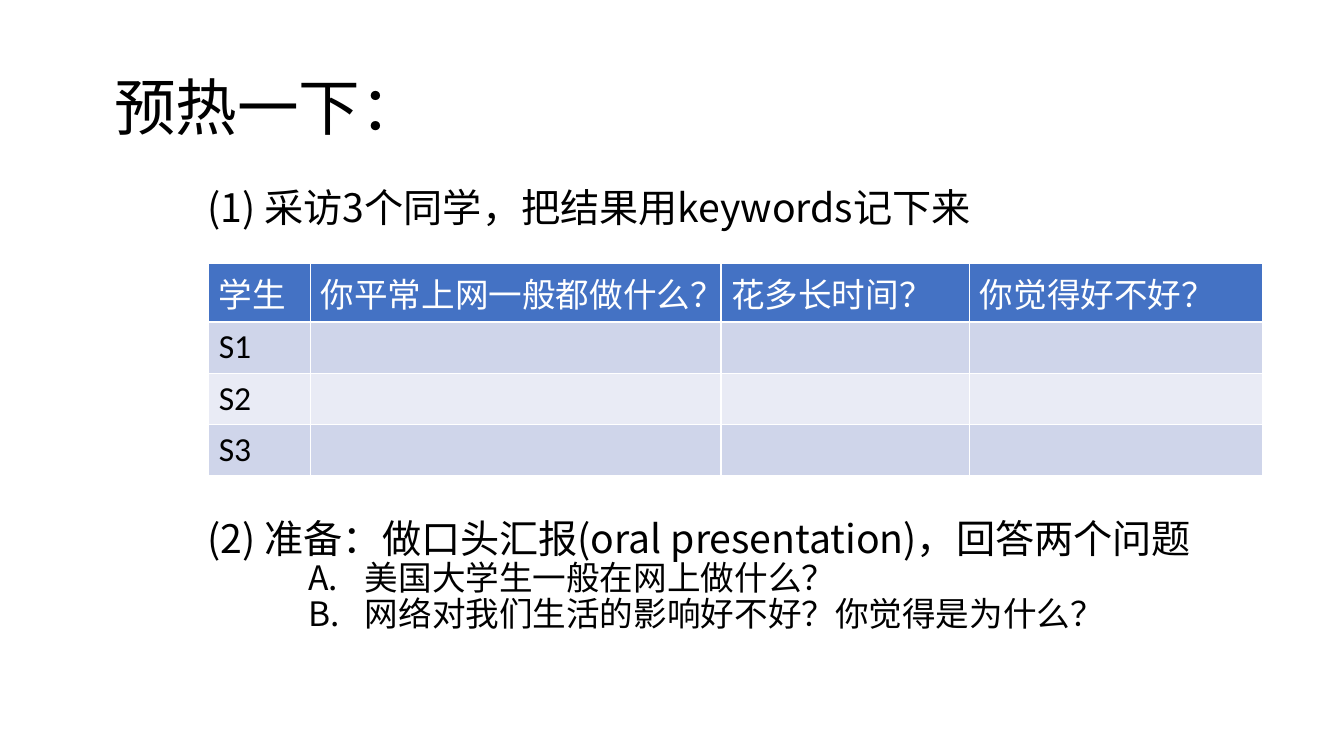
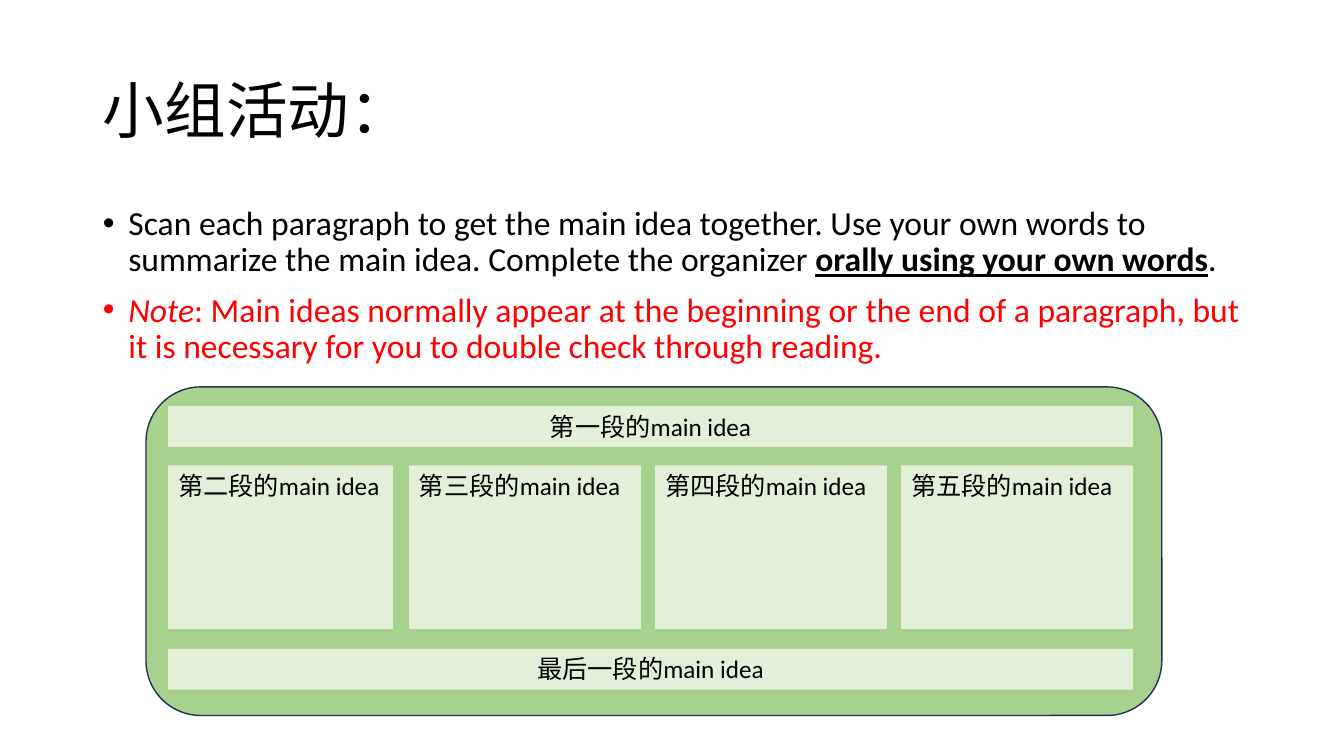
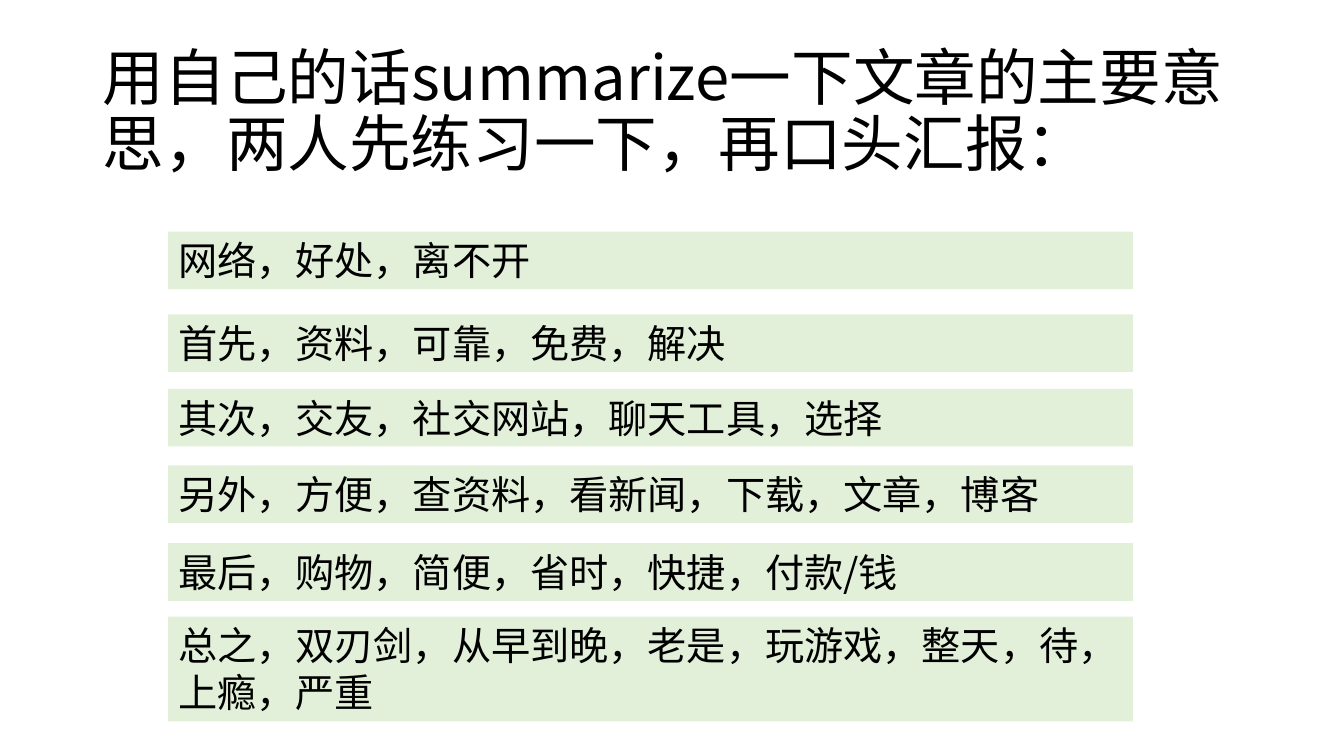
import pptx
import pptx.dml.color
import pptx.enum.shapes
import pptx.enum.text
import pptx.oxml
import pptx.oxml.ns
import pptx.util
from lxml import etree

Cm = pptx.util.Cm
Pt = pptx.util.Pt
RGBColor = pptx.dml.color.RGBColor
MSO_SHAPE = pptx.enum.shapes.MSO_SHAPE
PP_ALIGN = pptx.enum.text.PP_ALIGN
MSO_ANCHOR = pptx.enum.text.MSO_ANCHOR
MSO_AUTO_SIZE = pptx.enum.text.MSO_AUTO_SIZE
qn = pptx.oxml.ns.qn

BLACK = RGBColor(0x00, 0x00, 0x00)
WHITE = RGBColor(0xFF, 0xFF, 0xFF)
RED = RGBColor(0xFF, 0x00, 0x00)
GREEN = RGBColor(0xA9, 0xD1, 0x8E)
PALE_GREEN = RGBColor(0xE2, 0xF0, 0xD9)
NAVY = RGBColor(0x1E, 0x32, 0x56)
HEADER_BLUE = RGBColor(0x44, 0x72, 0xC4)
BAND_DARK = RGBColor(0xCF, 0xD5, 0xEA)
BAND_LIGHT = RGBColor(0xE9, 0xEB, 0xF5)

HAN = "Noto Sans CJK SC"
LATIN = "Calibri"

TITLE_BOX = (2.34, 1.02, 29.21, 3.68)
PANEL_LEFT = 4.24
PANEL_WIDTH = 24.31


def place(sp, box):
    sp.left, sp.top, sp.width, sp.height = [Cm(v) for v in box]


def add_run(p, text, size, font=HAN, color=BLACK, bold=False, italic=False, underline=False):
    r = p.add_run()
    r.text = text
    f = r.font
    f.size, f.bold, f.italic, f.underline = Pt(size), bold, italic, underline
    f.color.rgb = color
    f.name = font
    etree.SubElement(r._r.get_or_add_rPr(), qn("a:ea")).set("typeface", HAN)
    return r


def format_paragraph(p, before=0, margin=0, hanging=0, bullet=None, **bullet_attrs):
    p.line_spacing = 0.9
    p.space_before = Pt(before)
    pPr = p._p.get_or_add_pPr()
    pPr.set("marL", str(Cm(margin)))
    pPr.set("indent", str(-Cm(hanging)))
    bu = etree.SubElement(pPr, qn(bullet or "a:buNone"))
    for key, value in bullet_attrs.items():
        bu.set(key, value)


def start_slide(prs, title, box=TITLE_BOX, font=HAN, layout=5):
    s = prs.slides.add_slide(prs.slide_layouts[layout])
    place(s.shapes.title, box)
    tf = s.shapes.title.text_frame
    tf.auto_size = MSO_AUTO_SIZE.NONE
    tf.vertical_anchor = MSO_ANCHOR.MIDDLE
    p = tf.paragraphs[0]
    p.alignment = PP_ALIGN.LEFT
    p.line_spacing = 0.9
    add_run(p, title, 44, font)
    return s


def body_paragraphs(s, box, count):
    sp = s.placeholders[1]
    place(sp, box)
    tf = sp.text_frame
    tf.auto_size = MSO_AUTO_SIZE.NONE
    return [tf.paragraphs[0]] + [tf.add_paragraph() for _ in range(count - 1)]


def add_box(s, box, fill, shape=MSO_SHAPE.RECTANGLE, line=None):
    sp = s.shapes.add_shape(shape, *[Cm(v) for v in box])
    sp.shadow.inherit = False
    sp.fill.solid()
    sp.fill.fore_color.rgb = fill
    if line is None:
        sp.line.fill.background()
    else:
        sp.line.color.rgb = line
        sp.line.width = Pt(1)
    return sp


def add_card(s, box, text, size, font=HAN, align=PP_ALIGN.LEFT):
    tf = add_box(s, box, PALE_GREEN).text_frame
    tf.word_wrap = True
    tf.vertical_anchor = MSO_ANCHOR.TOP
    p = tf.paragraphs[0]
    p.alignment = align
    add_run(p, text, size, font)


def add_interview_table(s, left, top):
    headers = ["学生", "你平常上网一般都做什么？", "花多长时间？", "你觉得好不好？"]
    widths = [2.57, 10.34, 6.27, 7.39]
    heights = [1.48, 1.29, 1.29, 1.29]
    table = s.shapes.add_table(len(heights), len(widths), Cm(left), Cm(top),
                               Cm(sum(widths)), Cm(sum(heights))).table
    for column, width in zip(table.columns, widths):
        column.width = Cm(width)
    for i, (row, height) in enumerate(zip(table.rows, heights)):
        row.height = Cm(height)
        for cell in row.cells:
            cell.fill.solid()
            cell.fill.fore_color.rgb = (BAND_DARK if i % 2 else BAND_LIGHT) if i else HEADER_BLUE
    for j, header in enumerate(headers):
        add_run(table.cell(0, j).text_frame.paragraphs[0], header, 24, color=WHITE)
    for i in range(1, len(heights)):
        add_run(table.cell(i, 0).text_frame.paragraphs[0], f"S{i}", 24, LATIN)


def add_organizer(s, left, top, width, height):
    add_box(s, (left, top, width, height), GREEN, MSO_SHAPE.ROUNDED_RECTANGLE, NAVY)
    inner = left + 0.56
    for offset, text in [(0.48, "第一段的main idea"), (6.6, "最后一段的main idea")]:
        add_card(s, (inner, top + offset, PANEL_WIDTH, 1.03), text, 18, LATIN, PP_ALIGN.CENTER)
    right = inner + PANEL_WIDTH
    card_width, pitch = 5.84, 6.2
    columns = [(inner, 5.66)]
    columns += [(right - card_width - k * pitch, card_width) for k in (2, 1, 0)]
    for (x, w), number in zip(columns, "二三四五"):
        add_card(s, (x, top + 1.98, w, 4.12), f"第{number}段的main idea", 18, LATIN)


def warm_up_slide(prs):
    s = start_slide(prs, "预热一下：", (2.62, 0.94, 29.21, 3.68), layout=1)
    first, second, *questions = body_paragraphs(s, (4.98, 4.62, 26.57, 13.08), 4)
    format_paragraph(first, 10)
    add_run(first, "(1) 采访3个同学，把结果用keywords记下来", 28)
    format_paragraph(second, 206)
    add_run(second, "(2) 准备：做口头汇报(oral presentation)，回答两个问题", 28)
    texts = ["美国大学生一般在网上做什么？", "网络对我们生活的影响好不好？你觉得是为什么？"]
    for p, text in zip(questions, texts):
        p.level = 1
        format_paragraph(p, 0, 3.96, 1.42, "a:buAutoNum", type="alphaUcPeriod")
        add_run(p, text, 24)
    add_interview_table(s, 5.26, 6.63)


def group_slide(prs):
    s = start_slide(prs, "小组活动：", font=LATIN, layout=1)
    task, note = body_paragraphs(s, (2.34, 5.08, 29.21, 4.7), 2)
    for p in (task, note):
        format_paragraph(p, 10, 0.64, 0.64, "a:buChar", char="•")
    add_run(task, "Scan each paragraph to get the main idea together. Use your own words to "
                  "summarize the main idea. Complete the organizer ", 24, LATIN)
    add_run(task, "orally using your own words", 24, LATIN, bold=True, underline=True)
    add_run(task, ".", 24, LATIN)
    add_run(note, "Note", 24, LATIN, RED, italic=True)
    add_run(note, ": Main ideas normally appear at the beginning or the end of a paragraph, "
                  "but it is necessary for you to double check through reading.", 24, LATIN, RED)
    add_organizer(s, 3.68, 9.75, 25.6, 8.28)


def summary_slide(prs):
    s = start_slide(prs, "用自己的话summarize一下文章的主要意思，两人先练习一下，再口头汇报：")
    rows = [
        (5.84, 1.45, "网络，好处，离不开"),
        (7.92, 1.45, "首先，资料，可靠，免费，解决"),
        (9.8, 1.45, "其次，交友，社交网站，聊天工具，选择"),
        (11.73, 1.45, "另外，方便，查资料，看新闻，下载，文章，博客"),
        (13.69, 1.45, "最后，购物，简便，省时，快捷，付款/钱"),
        (15.54, 2.64, "总之，双刃剑，从早到晚，老是，玩游戏，整天，待，上瘾，严重"),
    ]
    for top, height, text in rows:
        add_card(s, (PANEL_LEFT, top, PANEL_WIDTH, height), text, 28)


def main():
    prs = pptx.Presentation()
    prs.slide_width, prs.slide_height = Cm(33.87), Cm(19.05)
    warm_up_slide(prs)
    group_slide(prs)
    summary_slide(prs)
    prs.save("out.pptx")


if __name__ == "__main__":
    main()
